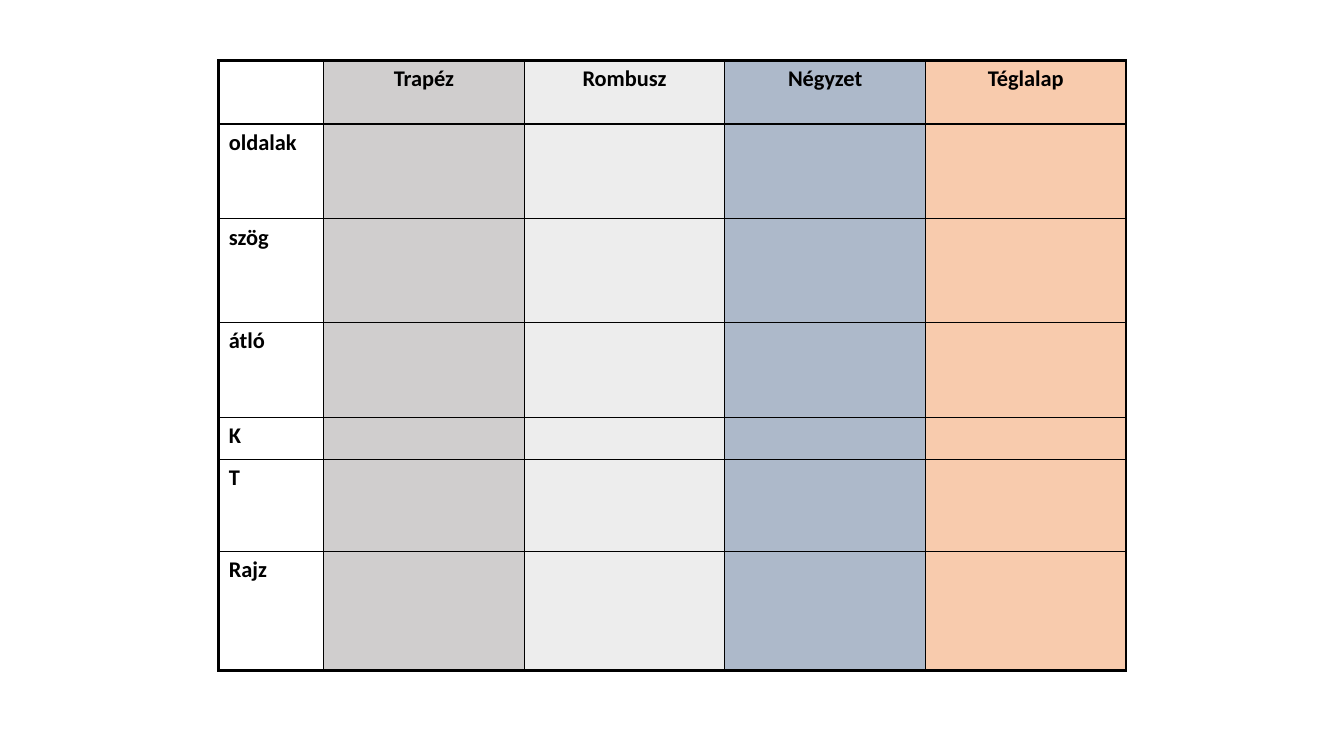
from lxml import etree
from pptx import Presentation
from pptx.dml.color import RGBColor
from pptx.enum.text import PP_ALIGN
from pptx.oxml.ns import qn
from pptx.util import Inches, Pt

CENTER, LEFT = PP_ALIGN.CENTER, PP_ALIGN.LEFT

COLORS = {
    "ink": "000000",
    "Trapéz": "D0CECE",
    "Rombusz": "EDEDED",
    "Négyzet": "ADB9CA",
    "Téglalap": "F8CBAD",
}
SHAPES = ["Trapéz", "Rombusz", "Négyzet", "Téglalap"]
# Property name and row height in inches
PROPERTIES = [
    ("oldalak", 0.94),
    ("szög", 1.03),
    ("átló", 0.94),
    ("K", 0.42),
    ("T", 0.91),
    ("Rajz", 1.18),
]
HEADER_HEIGHT = 0.63
LABEL_WIDTH, SHAPE_WIDTH = 1.04, 1.99
TABLE_LEFT, TABLE_TOP = 2.17, 0.6
FONT, FONT_SIZE = "Calibri", 16
OUTER_LINE, INNER_LINE = 2.25, 1


def add_border(cell, side, width):
    line = etree.SubElement(cell._tc.get_or_add_tcPr(), qn(f"a:ln{side}"), w=str(Pt(width)))
    fill = etree.SubElement(line, qn("a:solidFill"))
    etree.SubElement(fill, qn("a:srgbClr"), val=COLORS["ink"])


def write_label(cell, text, alignment):
    cell.text_frame.text = text
    paragraph = cell.text_frame.paragraphs[0]
    paragraph.alignment = alignment
    font = paragraph.runs[0].font
    font.name, font.size, font.bold = FONT, Pt(FONT_SIZE), True
    font.color.rgb = RGBColor.from_string(COLORS["ink"])


def add_shape_table(slide):
    widths = [LABEL_WIDTH] + [SHAPE_WIDTH] * len(SHAPES)
    heights = [HEADER_HEIGHT] + [height for _, height in PROPERTIES]
    last_row, last_column = len(heights) - 1, len(widths) - 1
    table = slide.shapes.add_table(
        len(heights), len(widths), Inches(TABLE_LEFT), Inches(TABLE_TOP),
        Inches(sum(widths)), Inches(sum(heights))).table
    table.first_row = table.horz_banding = False
    for column, width in zip(table.columns, widths):
        column.width = Inches(width)
    for row, height in zip(table.rows, heights):
        row.height = Inches(height)

    for row in range(len(heights)):
        for column in range(len(widths)):
            cell = table.cell(row, column)
            on_edge = {"L": column == 0, "R": column == last_column,
                       "T": row == 0, "B": row == last_row}
            for side, outer in on_edge.items():
                add_border(cell, side, OUTER_LINE if outer else INNER_LINE)
            if column == 0:
                cell.fill.background()
            else:
                cell.fill.solid()
                cell.fill.fore_color.rgb = RGBColor.from_string(COLORS[SHAPES[column - 1]])

    for column, name in enumerate(SHAPES, 1):
        write_label(table.cell(0, column), name, CENTER)
    for row, (name, _) in enumerate(PROPERTIES, 1):
        write_label(table.cell(row, 0), name, LEFT)


def main():
    presentation = Presentation()
    presentation.slide_width, presentation.slide_height = Inches(13.33), Inches(7.5)
    slide = presentation.slides.add_slide(presentation.slide_layouts.get_by_name("Blank"))
    add_shape_table(slide)
    presentation.save("out.pptx")


if __name__ == "__main__":
    main()
